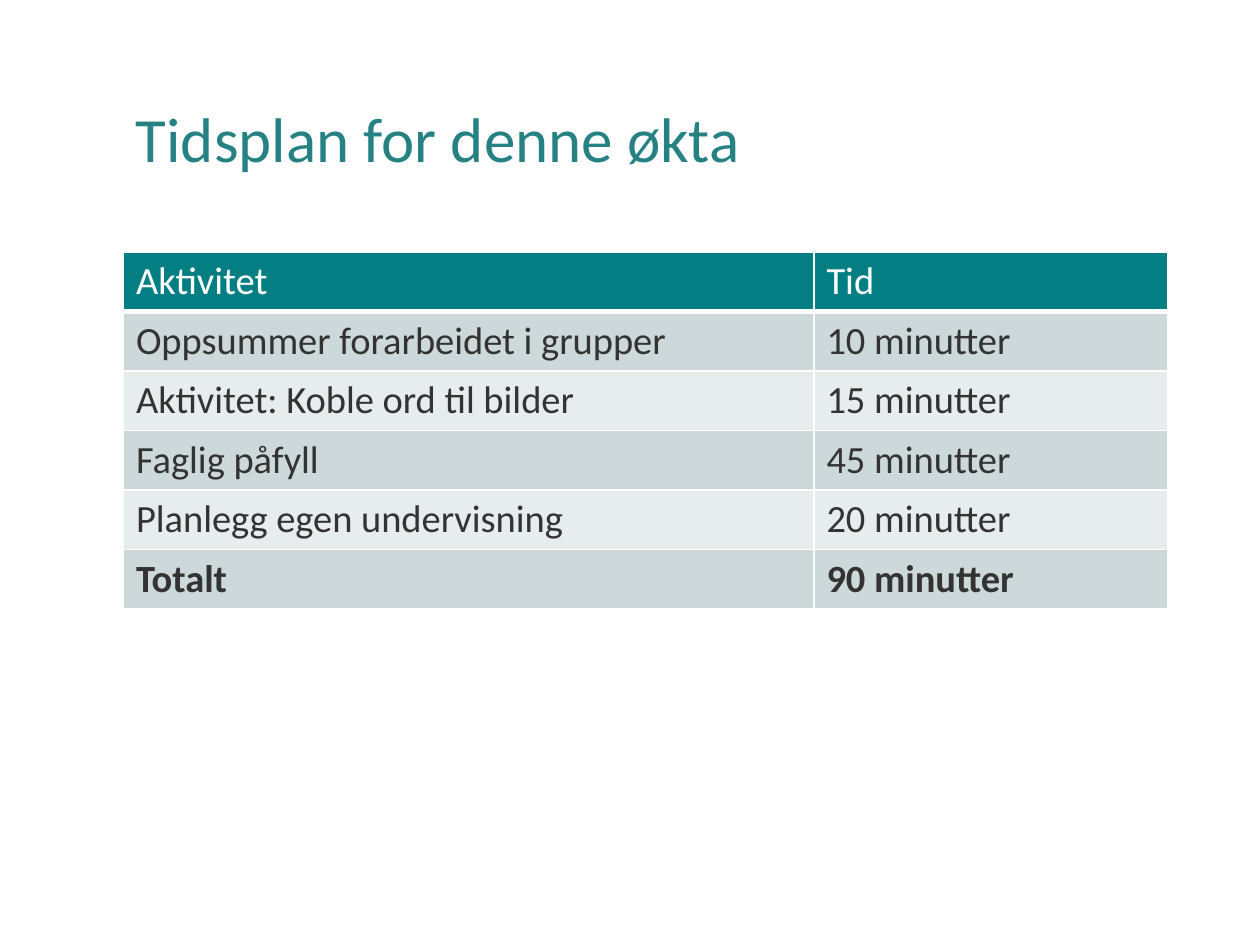
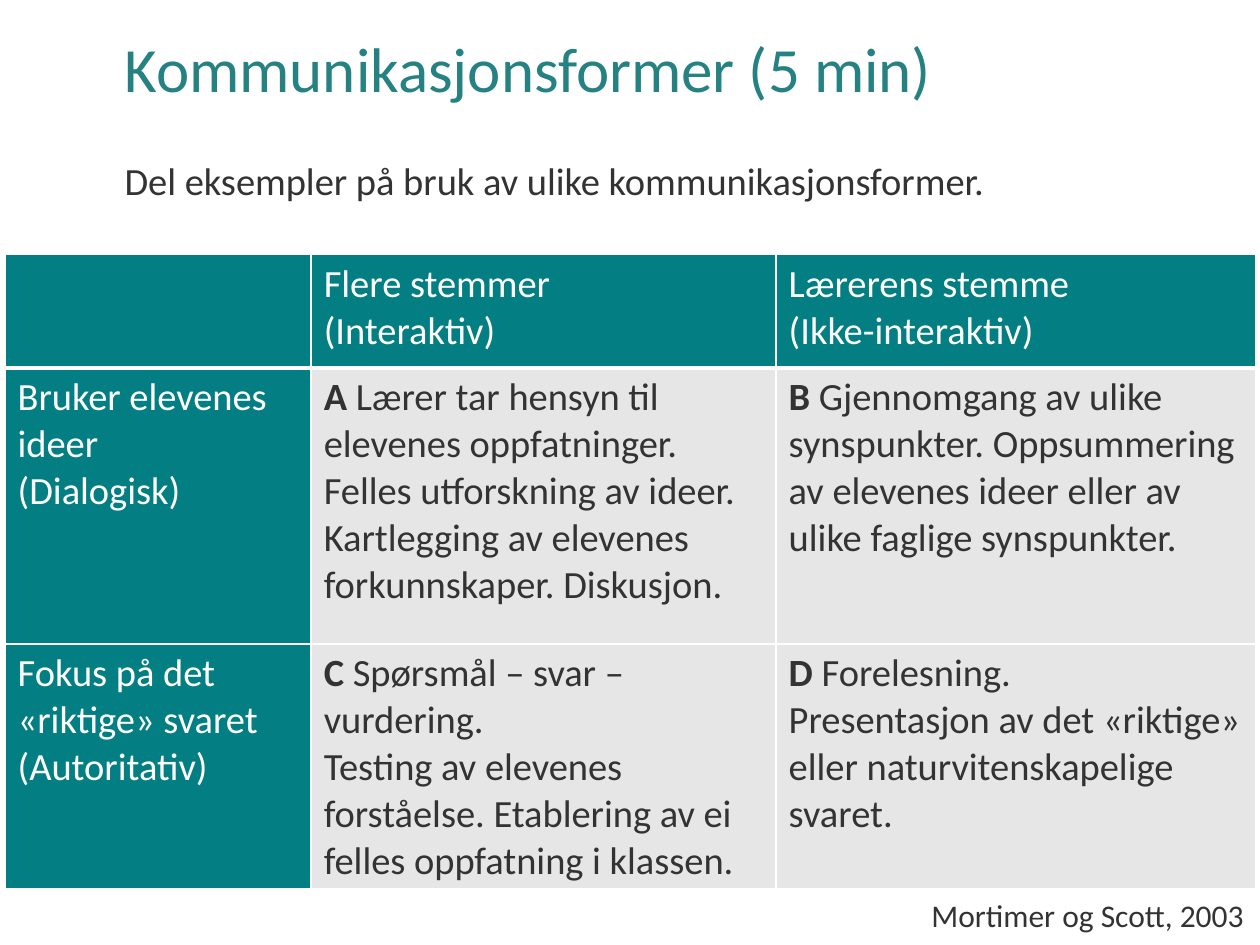
from lxml.etree import SubElement
from pptx import Presentation
from pptx.dml.color import RGBColor
from pptx.enum.text import MSO_ANCHOR, MSO_AUTO_SIZE, PP_ALIGN
from pptx.oxml.ns import qn
from pptx.util import Pt

EMU_PER_PX = 9144
FONT = "Calibri"
COLORS = {
    "title": "268183",
    "text": "333333",
    "white": "FFFFFF",
    "header": "037F83",
    "band_dark": "CCD8D9",
    "band_light": "E7ECED",
    "plain": "E7E6E6",
}
NO_TABLE_STYLE = "{2D5ABB26-0587-4C30-8999-92F81FD0307C}"


def px(length):
    """Turn px into EMU."""
    return length * EMU_PER_PX


def rgb(name):
    """Look up a colour by its name."""
    return RGBColor.from_string(COLORS[name])


class Deck:
    """Hold the shared style and the slide being built."""

    def __init__(self, width, height):
        """Start an empty presentation."""
        self.presentation = Presentation()
        self.presentation.slide_width = px(width)
        self.presentation.slide_height = px(height)
        self.slide = None

    def add_slide(self):
        """Begin a new blank slide."""
        self.slide = self.presentation.slides.add_slide(self.presentation.slide_layouts[6])

    def fill_text(self, frame, text, size, color, bold=False, align=PP_ALIGN.LEFT, spacing=1.0):
        """Set one paragraph per line, with **marked** parts in bold."""
        for index, line in enumerate(text.split("\n")):
            paragraph = frame.add_paragraph() if index else frame.paragraphs[0]
            paragraph.alignment = align
            paragraph.line_spacing = spacing
            font = paragraph.font
            font.name, font.size, font.bold = FONT, Pt(size), bold
            font.color.rgb = rgb(color)
            for part, words in enumerate(line.split("**")):
                if words:
                    run = paragraph.add_run()
                    run.text = words
                    if part % 2:
                        run.font.bold = True

    def text(self, box, text, size=22, color="text", align=PP_ALIGN.LEFT, spacing=1.0,
             anchor=MSO_ANCHOR.TOP, fit=MSO_AUTO_SIZE.SHAPE_TO_FIT_TEXT):
        """Add a wrapping text box."""
        frame = self.slide.shapes.add_textbox(*map(px, box)).text_frame
        frame.word_wrap = True
        frame.auto_size = fit
        frame.vertical_anchor = anchor
        self.fill_text(frame, text, size, color, align=align, spacing=spacing)

    def title(self, box, text):
        """Add the slide title."""
        self.text(box, text, 36, "title", spacing=0.9, anchor=MSO_ANCHOR.MIDDLE,
                  fit=MSO_AUTO_SIZE.NONE)

    def border(self, cell, side, width):
        """Draw a white border on one side of a cell."""
        line = SubElement(cell._tc.get_or_add_tcPr(), qn(f"a:ln{side}"), w=str(Pt(width)))
        fill = SubElement(line, qn("a:solidFill"))
        SubElement(fill, qn("a:srgbClr"), val=COLORS["white"])

    def table(self, left, top, widths, heights, rows, bands, header_column=False, total_row=False):
        """Add a table with a header row and body rows in repeating bands."""
        box = (left, top, sum(widths), sum(heights))
        table = self.slide.shapes.add_table(len(rows), len(widths), *map(px, box)).table
        table.first_row = table.horz_banding = False
        table._tbl.tblPr.find(qn("a:tableStyleId")).text = NO_TABLE_STYLE
        for column, width in zip(table.columns, widths):
            column.width = px(width)
        for row, height in zip(table.rows, heights):
            row.height = px(height)
        for r, row in enumerate(rows):
            for c, text in enumerate(row):
                cell = table.cell(r, c)
                is_header = r == 0 or (header_column and c == 0)
                side_widths = {"L": 1, "R": 1, "T": 3 if r == 1 else 1, "B": 3 if r == 0 else 1}
                for side, width in side_widths.items():
                    self.border(cell, side, width)
                cell.fill.solid()
                cell.fill.fore_color.rgb = rgb("header" if is_header else bands[(r - 1) % len(bands)])
                self.fill_text(cell.text_frame, text, 22, "white" if is_header else "text",
                               bold=total_row and r == len(rows) - 1)


def schedule(deck):
    """Build the timetable slide."""
    activities = [
        ("Aktivitet", "Tid"),
        ("Oppsummer forarbeidet i grupper", "10 minutter"),
        ("Aktivitet: Koble ord til bilder", "15 minutter"),
        ("Faglig påfyll", "45 minutter"),
        ("Planlegg egen undervisning", "20 minutter"),
        ("Totalt", "90 minutter"),
    ]
    deck.add_slide()
    deck.title((98, 40, 829, 145), "Tidsplan for denne økta")
    deck.table(98, 200, [548, 281], [47] * len(activities), activities,
               ["band_dark", "band_light"], total_row=True)


def communication(deck):
    """Build the slide on forms of communication."""
    forms = [
        ("", "Flere stemmer\n(Interaktiv)", "Lærerens stemme\n(Ikke-interaktiv)"),
        ("Bruker elevenes ideer\n(Dialogisk)",
         "**A** Lærer tar hensyn til elevenes oppfatninger. Felles utforskning av ideer. "
         "Kartlegging av elevenes forkunnskaper. Diskusjon.",
         "**B** Gjennomgang av ulike synspunkter. Oppsummering av elevenes ideer "
         "eller av ulike faglige synspunkter."),
        ("Fokus på det «riktige» svaret\n(Autoritativ)",
         "**C** Spørsmål – svar – vurdering.\n"
         "Testing av elevenes forståelse. Etablering av ei felles oppfatning i klassen.",
         "**D **Forelesning.\n"
         "Presentasjon av det «riktige» eller naturvitenskapelige svaret."),
    ]
    deck.add_slide()
    deck.title((89, 21, 838, 73), "Kommunikasjonsformer (5 min)")
    deck.text((89, 120, 801, 47), "Del eksempler på bruk av ulike kommunikasjonsformer.")
    deck.table(4, 202, [243, 369, 381], [90, 219, 194], forms, ["plain"], header_column=True)
    deck.text((642, 706, 355, 40), "Mortimer og Scott, 2003", 18, align=PP_ALIGN.RIGHT)


def main():
    """Build and save both slides."""
    deck = Deck(1000, 750)
    schedule(deck)
    communication(deck)
    deck.presentation.save("out.pptx")


if __name__ == "__main__":
    main()
